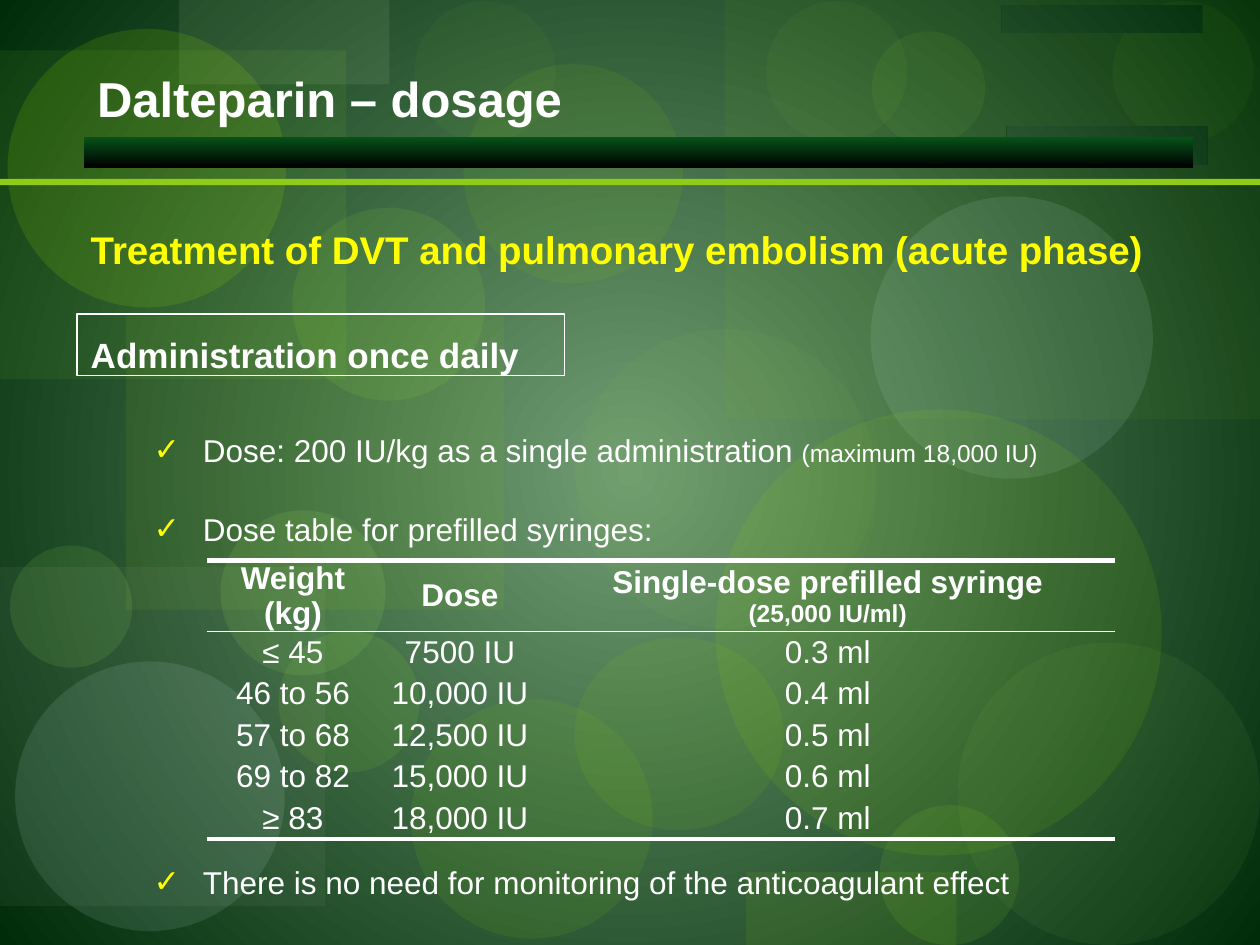
from lxml import etree
from pptx import Presentation
from pptx.dml.color import RGBColor
from pptx.enum.shapes import MSO_SHAPE
from pptx.enum.text import MSO_ANCHOR, MSO_AUTO_SIZE, PP_ALIGN
from pptx.oxml.ns import qn
from pptx.util import Inches, Pt

RECT, OVAL = MSO_SHAPE.RECTANGLE, MSO_SHAPE.OVAL
LEFT, CENTER = PP_ALIGN.LEFT, PP_ALIGN.CENTER
MIDDLE, TOP = MSO_ANCHOR.MIDDLE, MSO_ANCHOR.TOP
NO_FIT = MSO_AUTO_SIZE.NONE

WHITE = RGBColor(0xFF, 0xFF, 0xFF)
BLACK = RGBColor(0x00, 0x00, 0x00)
YELLOW = RGBColor(0xFF, 0xFF, 0x00)
SAGE = RGBColor(0x70, 0x9D, 0x72)
FOREST = RGBColor(0x00, 0x2C, 0x0A)
BAR_GREEN = RGBColor(0x06, 0x52, 0x18)
APPLE = RGBColor(0x8F, 0xCB, 0x17)
LEAF = RGBColor(0x75, 0xBC, 0x1B)
GREY = RGBColor(0xAB, 0xB3, 0xAC)
MOSS = RGBColor(0x86, 0xBE, 0x4B)
LIME = RGBColor(0xA5, 0xFF, 0x31)
MIST = RGBColor(0xC1, 0xE8, 0xE4)
GRASS = RGBColor(0x97, 0xE2, 0x00)
PALE = RGBColor(0xC6, 0xE2, 0xAC)
LIGHT_LIME = RGBColor(0xB5, 0xFF, 0x67)

# Backdrop: shape, left, top, width, height, colour, opacity in percent
BACKDROP = [
    (RECT, 1, 2.51, 3, 2.33, APPLE, 9),
    (OVAL, 3.26, 5.55, 1.92, 1.9, LEAF, 13),
    (RECT, 5.75, 0, 4.25, 3.33, APPLE, 6),
    (RECT, 0, 4.5, 2.58, 2.69, GREY, 8),
    (OVAL, 4.57, 2.61, 2.38, 2.38, MOSS, 8),
    (OVAL, 6.98, 6.39, 1.11, 1.11, LIME, 9),
    (OVAL, 6.91, 1.56, 2.24, 2.24, MIST, 11),
    (OVAL, 0.12, 5.25, 2.14, 2.14, MIST, 12),
    (OVAL, 2.21, 5.01, 1.12, 1.12, LIME, 9),
    (OVAL, 4.56, 5.06, 1.66, 1.53, GRASS, 8),
    (RECT, 0, 0.4, 2.75, 2.61, LIME, 7),
    (RECT, 1.42, 0, 1.67, 0.67, PALE, 10),
    (OVAL, 0.06, 0.23, 2.21, 2.21, GRASS, 15),
    (OVAL, 0.08, 4.33, 0.97, 0.97, LIGHT_LIME, 10),
    (OVAL, 2.32, 1.65, 1.53, 1.53, LIME, 9),
    (OVAL, 3.68, 0.51, 1.74, 1.74, GRASS, 8),
    (OVAL, 5.68, 3.25, 3.54, 3.54, GRASS, 10),
    (OVAL, 6.08, 0.01, 1.12, 1.12, LIME, 4),
    (OVAL, 7.6, 5.1, 2.4, 2.4, MOSS, 8),
    (OVAL, 1.75, 4.05, 1.31, 1.31, LIGHT_LIME, 10),
    (OVAL, 6.92, 0.25, 0.9, 0.9, LIME, 6),
    (OVAL, 8.83, 0.01, 1.12, 1.12, LIME, 4),
    (RECT, 5.92, 6.92, 1.67, 0.58, APPLE, 10),
    (OVAL, 3.29, 0.01, 1.12, 1.12, LIME, 4),
]

HEADER = [["Weight (kg)"], ["Dose"], ["Single-dose prefilled syringe", "(25,000 IU/ml)"]]
DOSES = [
    ("≤ 45", "7500 IU", "0.3 ml"),
    ("46 to 56", "10,000 IU", "0.4 ml"),
    ("57 to 68", "12,500 IU", "0.5 ml"),
    ("69 to 82", "15,000 IU", "0.6 ml"),
    ("≥ 83", "18,000 IU", "0.7 ml"),
]


def add_text(p, text, size=18, color=WHITE, bold=False, align=LEFT):
    p.alignment = align
    r = p.add_run()
    r.text = text
    r.font.name = "Arial"
    r.font.size = Pt(size)
    r.font.bold = bold
    r.font.color.rgb = color
    return r


def add_shape(s, kind, x, y, w, h, color=None, opacity=100):
    sp = s.shapes.add_shape(kind, Inches(x), Inches(y), Inches(w), Inches(h))
    sp.shadow.inherit = False
    sp.line.fill.background()
    if color is None:
        sp.fill.background()
        return sp
    sp.fill.solid()
    sp.fill.fore_color.rgb = color
    if opacity < 100:
        clr = sp.fill._xPr.find(qn("a:solidFill"))[0]
        etree.SubElement(clr, qn("a:alpha"), val=str(opacity * 1000))
    return sp


def set_gradient(fill, first, last):
    fill.gradient()
    for stop, position, color in zip(fill.gradient_stops, (0, 1), (first, last)):
        stop.position = position
        stop.color.rgb = color


def set_background(s):
    fill = s.background.fill
    set_gradient(fill, SAGE, FOREST)
    grad = next(s._element.iter(qn("a:gradFill")))
    grad.remove(grad.find(qn("a:lin")))
    radial = etree.SubElement(grad, qn("a:path"), path="circle")
    etree.SubElement(radial, qn("a:fillToRect"), l="50000", t="50000", r="50000", b="50000")


def add_background_window(s, x, y, w, h):
    """Rectangle that shows the slide background through the backdrop."""
    sp = add_shape(s, RECT, x, y, w, h)
    el = sp._element
    el.set("useBgFill", "1")
    el.spPr.remove(el.spPr.find(qn("a:noFill")))
    el.remove(el.find(qn("p:style")))


def place(sp, x, y, w, h, anchor):
    sp.left, sp.top, sp.width, sp.height = (Inches(v) for v in (x, y, w, h))
    tf = sp.text_frame
    tf.word_wrap = True
    tf.auto_size = NO_FIT
    tf.vertical_anchor = anchor
    return tf


def format_item(p, level, gap):
    """Indent, space before and bullet of one body paragraph."""
    p.level = level
    p.space_before = Pt(gap)
    pPr = p._p.get_or_add_pPr()
    pPr.set("marL", str(Inches(0.89 if level == 2 else 0.39)))
    pPr.set("indent", str(Inches(-0.39)))
    if level == 2:
        clr = etree.SubElement(pPr, qn("a:buClr"))
        etree.SubElement(clr, qn("a:srgbClr"), val=str(YELLOW))
        etree.SubElement(pPr, qn("a:buChar"), char="✓")
    else:
        etree.SubElement(pPr, qn("a:buNone"))


def fill_body(tf):
    tf.margin_top = Inches(0.09)
    # Level, space before, runs
    items = [
        (1, 0, [("Treatment of DVT and pulmonary embolism (acute phase)",
                 dict(size=22, color=YELLOW, bold=True))]),
        (1, 35, [("Administration once daily", dict(size=20, bold=True))]),
        (2, 32, [("Dose: 200 IU/kg as a single administration ", {}),
                 ("(maximum 18,000 IU)", dict(size=14))]),
        (2, 23.5, [("Dose table for prefilled syringes:", {})]),
        (2, 180, [("There is no need for monitoring of the anticoagulant effect", {})]),
    ]
    for i, (level, gap, runs) in enumerate(items):
        p = tf.add_paragraph() if i else tf.paragraphs[0]
        format_item(p, level, gap)
        for text, fmt in runs:
            add_text(p, text, **fmt)


def set_borders(cell, top, bottom):
    tcPr = cell._tc.get_or_add_tcPr()
    for side, width in (("L", 0), ("R", 0), ("T", top), ("B", bottom)):
        ln = etree.SubElement(tcPr, qn("a:ln" + side), w=str(Pt(width)))
        if width:
            fill = etree.SubElement(ln, qn("a:solidFill"))
            etree.SubElement(fill, qn("a:srgbClr"), val=str(WHITE))
        else:
            etree.SubElement(ln, qn("a:noFill"))


def add_dose_table(s):
    rows = [HEADER] + [[[text] for text in row] for row in DOSES]
    last = len(rows) - 1
    top_rule, bottom_rule = {0: 3, 1: 1}, {0: 1, last: 3}
    table = s.shapes.add_table(len(rows), 3, Inches(1.64), Inches(4.45),
                               Inches(7.21), Inches(2.13)).table
    table.first_row = table.horz_banding = False
    for col, width in zip(table.columns, (1.37, 1.28, 4.56)):
        col.width = Inches(width)
    for i, row in enumerate(rows):
        table.rows[i].height = Inches(0.33 if i else 0.48)
        for j, lines in enumerate(row):
            cell = table.cell(i, j)
            set_borders(cell, top_rule.get(i, 0), bottom_rule.get(i, 0))
            cell.fill.background()
            cell.vertical_anchor = MIDDLE
            cell.margin_left = cell.margin_right = Inches(0.07)
            cell.margin_top = cell.margin_bottom = 0
            for k, text in enumerate(lines):
                p = cell.text_frame.add_paragraph() if k else cell.text_frame.paragraphs[0]
                add_text(p, text, size=14 if k else 18, bold=i == 0, align=CENTER)


def main():
    prs = Presentation()
    prs.slide_width, prs.slide_height = Inches(10), Inches(7.5)
    s = prs.slides.add_slide(prs.slide_layouts[1])
    title, body = s.placeholders[0], s.placeholders[1]

    # Background and decoration
    set_background(s)
    for item in BACKDROP:
        add_shape(s, *item)
    add_background_window(s, 7.99, 1, 1.59, 0.31)
    add_background_window(s, 7.95, 0.04, 1.59, 0.22)
    add_shape(s, RECT, 0, 1.42, 10, 0.05, APPLE)
    bar = add_shape(s, RECT, 0.67, 1.09, 8.8, 0.24, BLACK)
    set_gradient(bar.fill, BAR_GREEN, BLACK)
    bar.fill.gradient_angle = 270

    # Title and body, brought in front of the decoration
    for sp in (title, body):
        s.shapes._spTree.append(sp._element)
    tf = place(title, 0.67, 0.49, 8.83, 0.58, MIDDLE)
    add_text(tf.paragraphs[0], "Dalteparin – dosage", size=28, bold=True)
    fill_body(place(body, 0.62, 1.7, 8.92, 5.55, TOP))

    # Dose table and frame around the subheading
    add_dose_table(s)
    frame = add_shape(s, RECT, 0.61, 2.49, 3.87, 0.49)
    frame.line.color.rgb = WHITE
    frame.line.width = Pt(1)

    prs.save("out.pptx")


if __name__ == "__main__":
    main()
